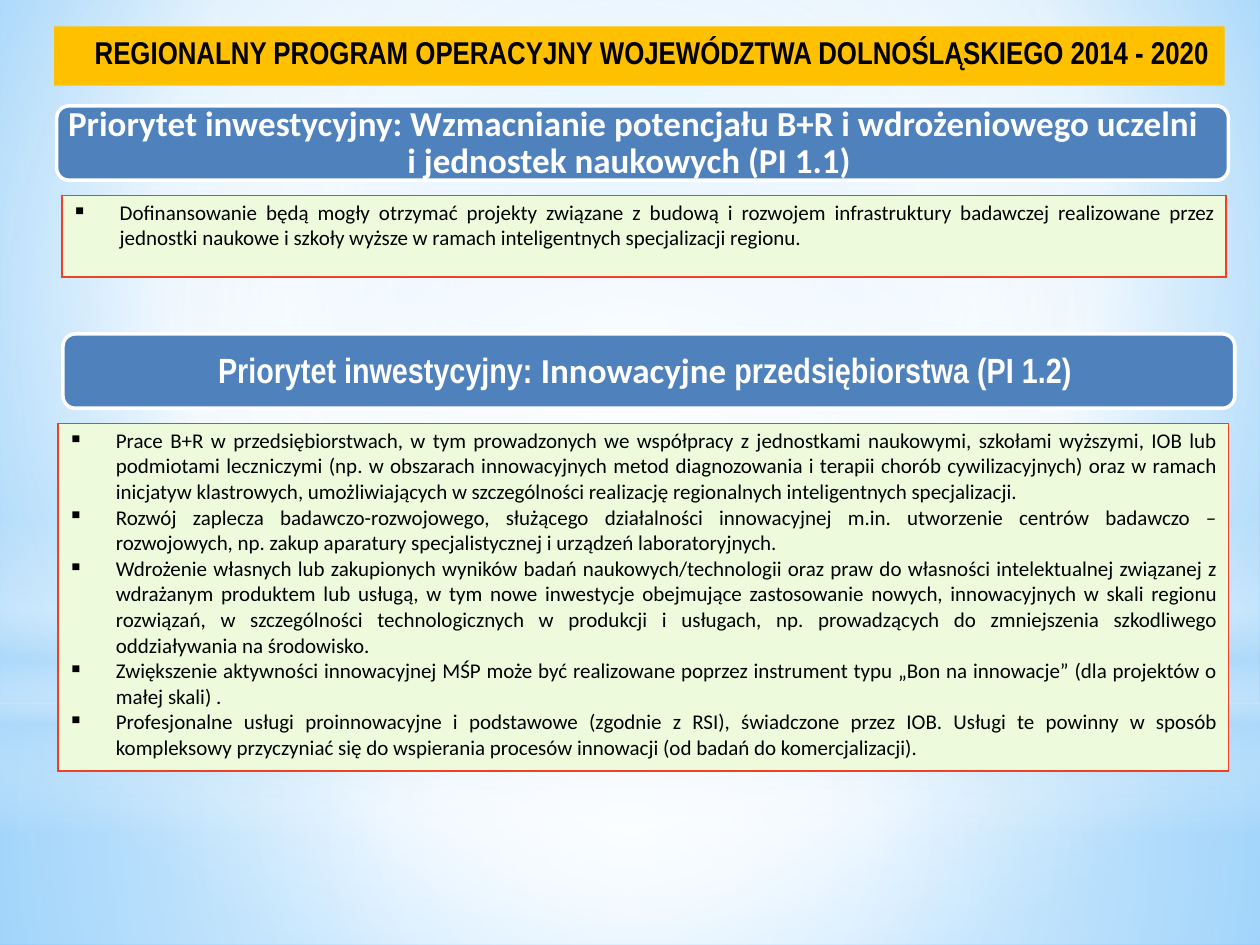
import lxml.etree
import pptx
import pptx.dml.color
import pptx.enum.shapes
import pptx.enum.text
import pptx.oxml
import pptx.oxml.ns
import pptx.util

qn = pptx.oxml.ns.qn
color = pptx.dml.color.RGBColor.from_string
Pt = pptx.util.Pt
Align = pptx.enum.text.PP_ALIGN
Anchor = pptx.enum.text.MSO_ANCHOR
Shape = pptx.enum.shapes.MSO_SHAPE

presentation = pptx.Presentation()
presentation.slide_width = pptx.util.Inches(10)
presentation.slide_height = pptx.util.Inches(7.5)
column = presentation.slide_width / 100
row = presentation.slide_height / 75
slide = presentation.slides.add_slide(presentation.slide_layouts[5])


def place(left, top, width, height):
    return int(left * column), int(top * row), int(width * column), int(height * row)


def set_gradient(properties, stops, focus):
    gradient = lxml.etree.Element(qn("a:gradFill"), rotWithShape="1")
    stop_list = lxml.etree.SubElement(gradient, qn("a:gsLst"))
    for position, value, opacity in stops:
        stop = lxml.etree.SubElement(stop_list, qn("a:gs"), pos=str(position * 1000))
        tint = lxml.etree.SubElement(stop, qn("a:srgbClr"), val=value)
        if opacity < 100:
            lxml.etree.SubElement(tint, qn("a:alpha"), val=str(opacity * 1000))
    if focus:
        circle = lxml.etree.SubElement(gradient, qn("a:path"), path="circle")
        edges = {side: str(share * 1000) for side, share in zip("ltrb", focus)}
        lxml.etree.SubElement(circle, qn("a:fillToRect"), **edges)
    else:
        lxml.etree.SubElement(gradient, qn("a:lin"), ang="5400000", scaled="0")
    properties.replace(properties.find(qn("a:solidFill")), gradient)


slide.background.fill.solid()
set_gradient(
    slide.element.find(".//" + qn("p:bgPr")),
    [(0, "9ED5FF", 100), (60, "FFFFFF", 100), (100, "5BB9FF", 100)],
    (20, 10, 20, 60),
)

center = (50, 50, 50, 50)
backdrops = [
    (Shape.RECTANGLE, (0, 55.8, 100, 19.2), center,
     [(0, "FFFFFF", 91), (37, "FFFFFF", 76), (100, "B4DCFA", 79)]),
    (Shape.RECTANGLE, (0, 0, 100, 55.8), center,
     [(0, "FFFFFF", 89), (48, "FFFFFF", 62), (100, "B4DCFA", 79)]),
    (Shape.RECTANGLE, (0, 41.2, 100, 25), None,
     [(0, "FFFFFF", 0), (29, "FFFFFF", 30), (45, "B4DCFA", 40),
      (55, "FFFFFF", 26), (65, "B4DCFA", 60), (100, "FFFFFF", 0)]),
    (Shape.OVAL, (0, 17.5, 100, 55.8), center,
     [(0, "FFFFFF", 100), (56, "FFFFFF", 0)]),
]
for kind, area, focus, stops in backdrops:
    shape = slide.shapes.add_shape(kind, *place(*area))
    shape.shadow.inherit = False
    shape.line.fill.background()
    shape.fill.solid()
    set_gradient(shape.element.spPr, stops, focus)

title = slide.shapes.title
slide.shapes._spTree.append(title.element)
title.left, title.top, title.width, title.height = place(4.3, 2.1, 92.9, 4.7)
title.fill.solid()
title.fill.fore_color.rgb = color("FFC000")
title.text_frame.text = "REGIONALNY PROGRAM OPERACYJNY WOJEWÓDZTWA DOLNOŚLĄSKIEGO 2014 - 2020"
title.text_frame.auto_size = pptx.enum.text.MSO_AUTO_SIZE.NONE
title.text_frame.vertical_anchor = Anchor.TOP
paragraph = title.text_frame.paragraphs[0]
paragraph.alignment = Align.CENTER
paragraph._p.get_or_add_pPr().set("marL", str(int(2 * column)))
paragraph.font.name = "Arial Narrow"
paragraph.font.size = Pt(18)
paragraph.font.bold = True
paragraph.font.color.rgb = color("000000")

priorities = [
    ((4.5, 8.4, 93, 5.9), (2.6, 8.7, 95.3, 5.4), [
        ("Priorytet inwestycyjny: Wzmacnianie potencjału B+R i wdrożeniowego "
         "uczelni i jednostek naukowych (PI 1.1) ", "Calibri"),
    ]),
    ((5, 26.5, 93, 5.9), (5.3, 26.8, 92.4, 5.4), [
        ("Priorytet inwestycyjny: ", "Arial Narrow"),
        ("Innowacyjne", "Calibri"),
        (" przedsiębiorstwa (PI 1.2) ", "Arial Narrow"),
    ]),
]
for bar_area, label_area, parts in priorities:
    group = slide.shapes.add_group_shape()
    bar = group.shapes.add_shape(Shape.ROUNDED_RECTANGLE, *place(*bar_area))
    bar.shadow.inherit = False
    bar.fill.solid()
    bar.fill.fore_color.rgb = color("4F81BD")
    bar.line.color.rgb = color("FFFFFF")
    bar.line.width = Pt(2)
    label = group.shapes.add_textbox(*place(*label_area)).text_frame
    label.word_wrap = True
    label.vertical_anchor = Anchor.MIDDLE
    label.margin_left = label.margin_right = int(2.6 * column)
    label.margin_top = label.margin_bottom = 0
    paragraph = label.paragraphs[0]
    paragraph.alignment = Align.CENTER
    paragraph.line_spacing = 0.9
    paragraph.font.size = Pt(20)
    paragraph.font.bold = True
    paragraph.font.color.rgb = color("FFFFFF")
    for text, typeface in parts:
        run = paragraph.add_run()
        run.text = text
        run.font.name = typeface

descriptions = [
    ((4.9, 15.5, 92.4, 6.5), [
        "Dofinansowanie będą mogły otrzymać projekty związane z budową i rozwojem infrastruktury "
        "badawczej realizowane przez jednostki naukowe i szkoły wyższe w ramach inteligentnych "
        "specjalizacji regionu.",
    ]),
    ((4.6, 33.6, 92.9, 27.6), [
        "Prace B+R w przedsiębiorstwach, w tym prowadzonych we współpracy z jednostkami naukowymi, "
        "szkołami wyższymi, IOB lub podmiotami leczniczymi (np. w obszarach innowacyjnych metod "
        "diagnozowania i terapii chorób cywilizacyjnych) oraz w ramach inicjatyw klastrowych, "
        "umożliwiających w szczególności realizację regionalnych inteligentnych specjalizacji.",
        "Rozwój zaplecza badawczo-rozwojowego, służącego działalności innowacyjnej m.in. utworzenie "
        "centrów badawczo – rozwojowych, np. zakup aparatury specjalistycznej i urządzeń "
        "laboratoryjnych.",
        "Wdrożenie własnych lub zakupionych wyników badań naukowych/technologii oraz praw do "
        "własności intelektualnej związanej z wdrażanym produktem lub usługą, w tym nowe inwestycje "
        "obejmujące zastosowanie nowych, innowacyjnych w skali regionu rozwiązań, w szczególności "
        "technologicznych w produkcji i usługach, np. prowadzących do zmniejszenia szkodliwego "
        "oddziaływania na środowisko.",
        "Zwiększenie aktywności innowacyjnej MŚP może być realizowane poprzez instrument typu "
        "„Bon na innowacje” (dla projektów o małej skali) .",
        "Profesjonalne usługi proinnowacyjne i podstawowe (zgodnie z RSI), świadczone przez IOB. "
        "Usługi te powinny w sposób kompleksowy przyczyniać się do wspierania procesów innowacji "
        "(od badań do komercjalizacji).",
    ]),
]
for area, items in descriptions:
    table = slide.shapes.add_table(1, 1, *place(*area)).table
    table.first_row = table.horz_banding = False
    cell = table.cell(0, 0)
    cell.margin_left = cell.margin_right = int(0.8 * column)
    cell.margin_top = cell.margin_bottom = int(0.4 * row)
    cell.fill.solid()
    cell.fill.fore_color.rgb = color("EDFBDC")
    properties = cell._tc.get_or_add_tcPr()
    for index, side in enumerate("LRTB"):
        border = lxml.etree.Element(qn("a:ln" + side), w=str(Pt(1)))
        paint = lxml.etree.SubElement(border, qn("a:solidFill"))
        lxml.etree.SubElement(paint, qn("a:srgbClr"), val="F14124")
        properties.insert(index, border)
    cell.text = "\n".join(items)
    for paragraph in cell.text_frame.paragraphs:
        paragraph.alignment = Align.JUSTIFY
        layout = paragraph._p.get_or_add_pPr()
        layout.set("marL", str(int(3.8 * column)))
        layout.set("indent", str(int(-3.8 * column)))
        lxml.etree.SubElement(layout, qn("a:buChar"), char="▪")
        paragraph.font.name = "Calibri"
        paragraph.font.size = Pt(12)
        paragraph.font.color.rgb = color("000000")

presentation.save("out.pptx")
